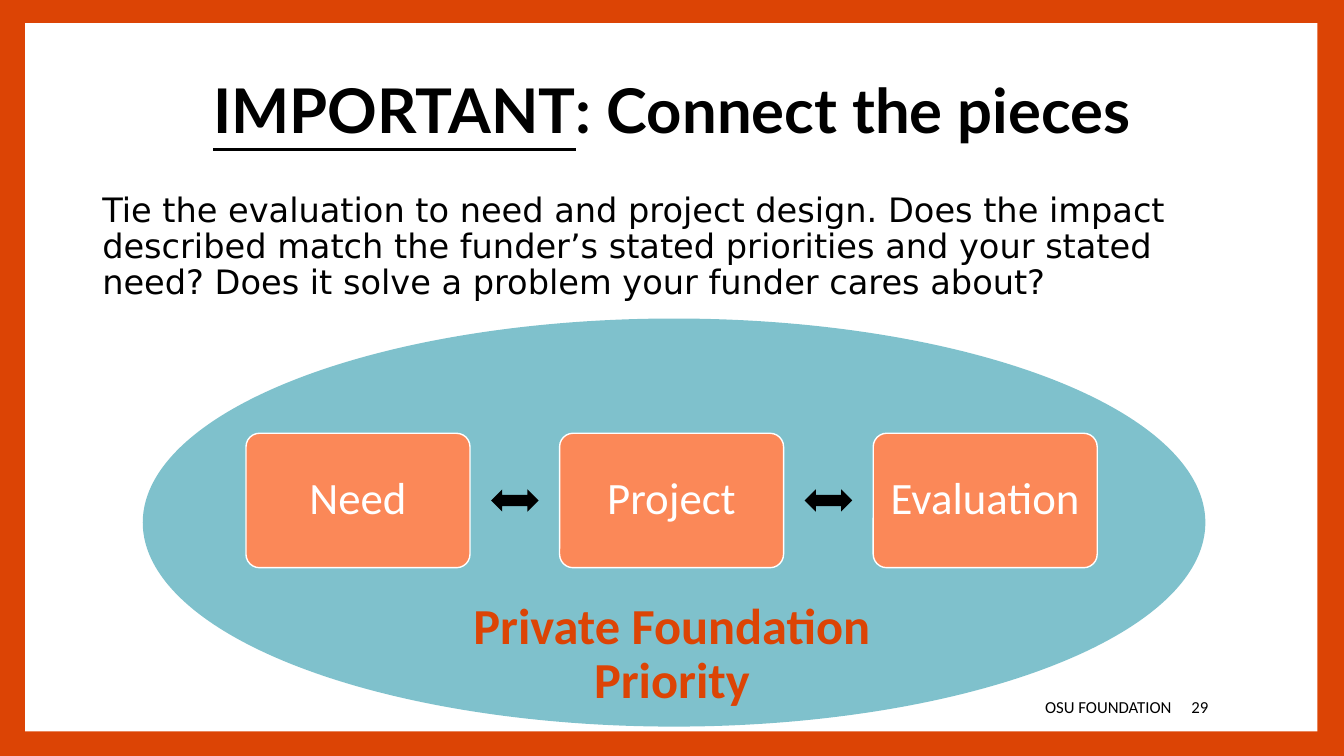
from lxml import etree
from pptx import Presentation
from pptx.dml.color import RGBColor
from pptx.enum.shapes import MSO_SHAPE
from pptx.enum.text import MSO_ANCHOR, PP_ALIGN
from pptx.oxml.ns import qn
from pptx.util import Pt

ORANGE, WHITE, BLACK = "DC4405", "FFFFFF", "000000"
TEAL, CORAL = "00859B", "FB8858"

TITLE = ["IMPORTANT", ": Connect the pieces"]
BODY = ("Tie the evaluation to need and project design. Does the impact described "
        "match the funder’s stated priorities and your stated need? Does it solve "
        "a problem your funder cares about?")
STEPS = ["Need", "Project", "Evaluation"]
PRIORITY = "Private Foundation Priority"
FOOTER, PAGE = "OSU FOUNDATION", "29"

STEP_LEFT, STEP_TOP, STEP_W, STEP_H = 175.75, 309.5, 160, 96
STEP_PITCH = 224
ARROW_W, ARROW_H = 34, 16


def rgb(hex_color):
    return RGBColor.from_string(hex_color)


def format_text(sp, size, color, font="Calibri", bold=False, align=PP_ALIGN.LEFT,
                anchor=MSO_ANCHOR.MIDDLE, spacing=None):
    tf = sp.text_frame
    tf.word_wrap = True
    tf.vertical_anchor = anchor
    for p in tf.paragraphs:
        p.alignment = align
        p.line_spacing = spacing
        for r in p.runs:
            r.font.name, r.font.size, r.font.bold = font, Pt(size), bold
            r.font.color.rgb = rgb(color)


def add_text(s, text, box, *args, **kwargs):
    sp = s.shapes.add_textbox(*map(Pt, box))
    sp.text_frame.text = text
    format_text(sp, *args, **kwargs)


def add_shape(s, kind, box, fill, line=None):
    sp = s.shapes.add_shape(kind, *map(Pt, box))
    sp.shadow.inherit = False
    sp.fill.solid()
    sp.fill.fore_color.rgb = rgb(fill)
    if line:
        sp.line.color.rgb = rgb(line)
        sp.line.width = Pt(1)
    else:
        sp.line.fill.background()
    return sp


def add_steps(s):
    """Draw the boxes in a row with a two-way arrow centred in each gap."""
    gap = STEP_PITCH - STEP_W
    for i, step in enumerate(STEPS):
        left = STEP_LEFT + i * STEP_PITCH
        box = add_shape(s, MSO_SHAPE.ROUNDED_RECTANGLE,
                        (left, STEP_TOP, STEP_W, STEP_H), CORAL, WHITE)
        box.adjustments[0] = 0.1
        box.text_frame.text = step
        format_text(box, 32, WHITE, align=PP_ALIGN.CENTER, spacing=0.9)
        box.text_frame.word_wrap = False
        if i < len(STEPS) - 1:
            add_shape(s, MSO_SHAPE.LEFT_RIGHT_ARROW,
                      (left + STEP_W + (gap - ARROW_W) / 2,
                       STEP_TOP + (STEP_H - ARROW_H) / 2, ARROW_W, ARROW_H), BLACK)


def main():
    prs = Presentation()
    prs.slide_width, prs.slide_height = Pt(960), Pt(540)
    s = prs.slides.add_slide(prs.slide_layouts[5])
    s.background.fill.solid()
    s.background.fill.fore_color.rgb = rgb(ORANGE)

    title = s.shapes.title
    title.left, title.top, title.width, title.height = map(Pt, (66, 29, 828, 104))
    p = title.text_frame.paragraphs[0]
    for text in TITLE:
        p.add_run().text = text
    p.runs[0].font.underline = True
    format_text(title, 44, BLACK, "Lato", True, PP_ALIGN.CENTER, spacing=0.9)

    panel = add_shape(s, MSO_SHAPE.RECTANGLE, (18, 16.5, 923, 506), WHITE)
    title._element.addprevious(panel._element)

    add_text(s, BODY, (66, 134.5, 828, 91), 24, BLACK, "DejaVu Sans",
             anchor=MSO_ANCHOR.TOP, spacing=0.9)
    add_text(s, FOOTER, (318, 490.5, 526, 29), 12, BLACK, align=PP_ALIGN.RIGHT)
    add_text(s, PAGE, (844, 490.5, 50, 29), 12, BLACK)

    ellipse = add_shape(s, MSO_SHAPE.OVAL, (102, 227.5, 759, 291.5), TEAL)
    color = ellipse._element.spPr.find(qn("a:solidFill"))[0]
    etree.SubElement(color, qn("a:alpha"), val="50000")

    add_steps(s)
    add_text(s, PRIORITY, (326, 425.5, 308, 72), 36, ORANGE, bold=True,
             align=PP_ALIGN.CENTER, anchor=MSO_ANCHOR.TOP, spacing=0.9)
    prs.save("out.pptx")


if __name__ == "__main__":
    main()
